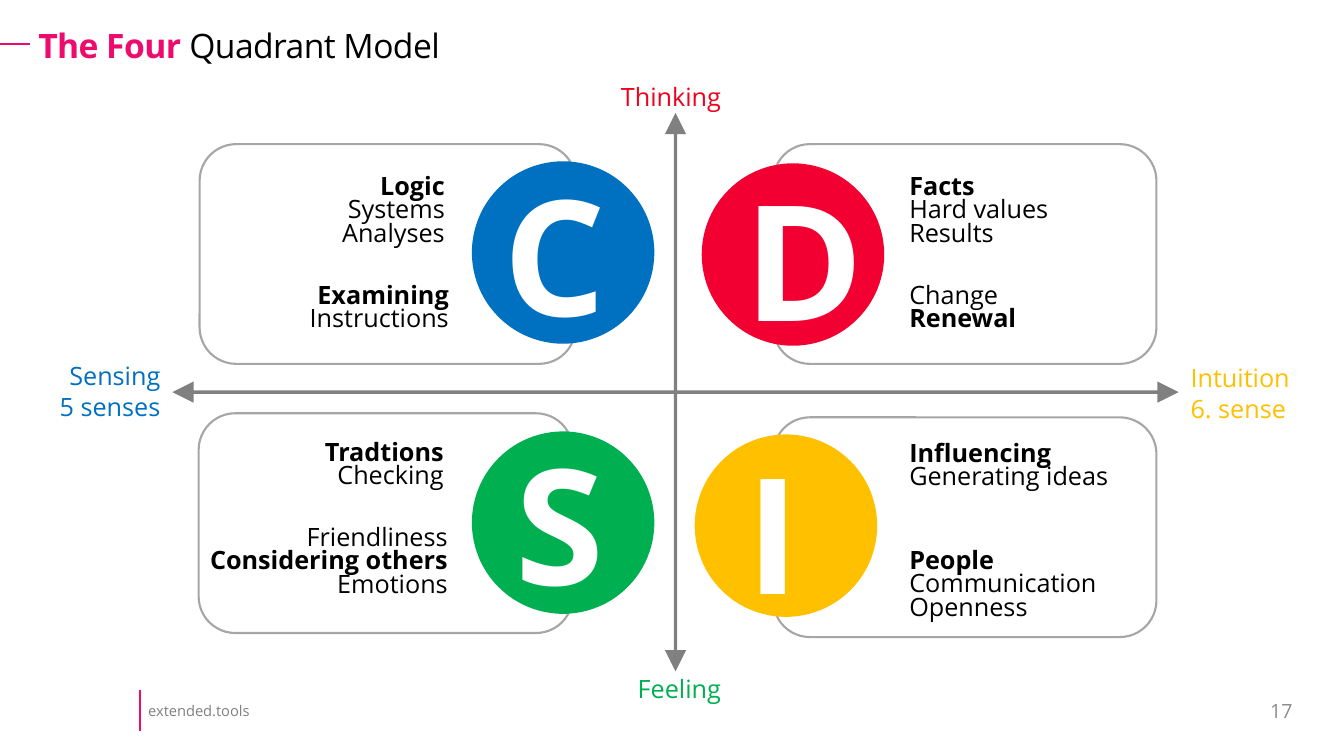
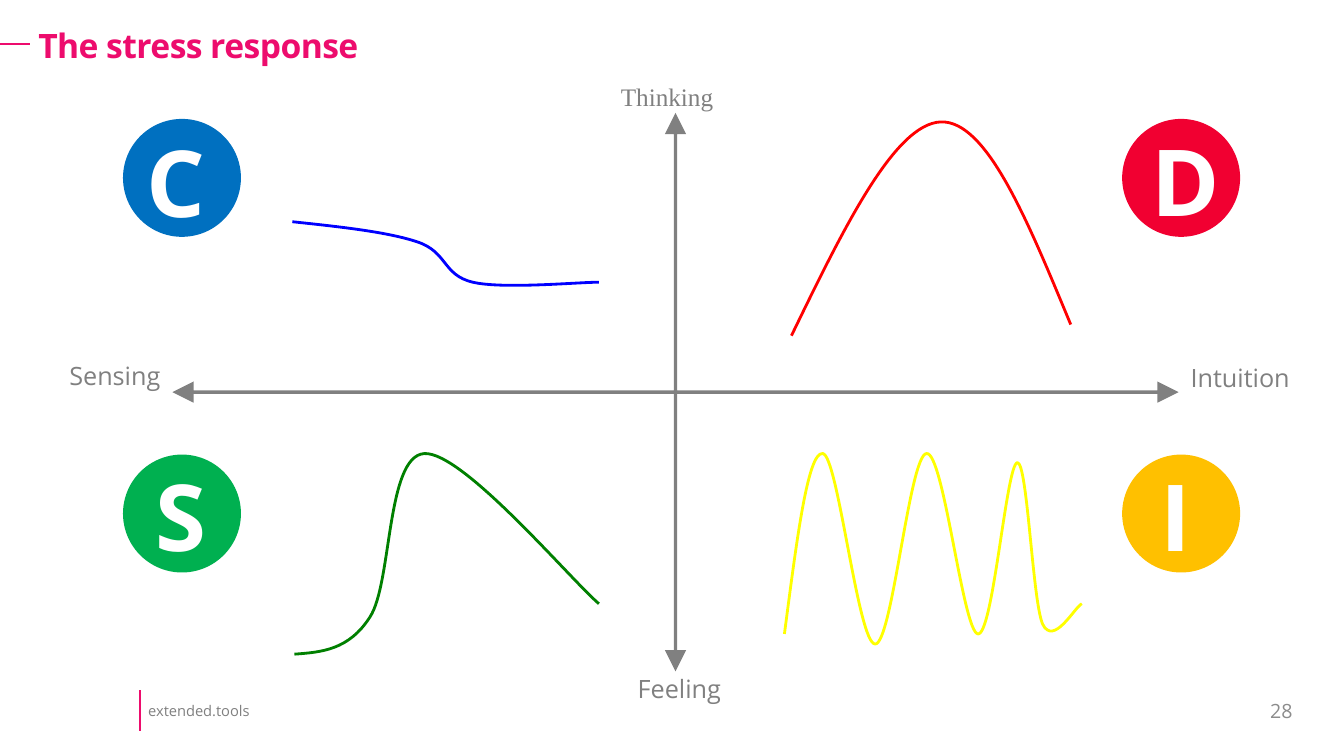
from dataclasses import dataclass

from lxml import etree
from pptx import Presentation
from pptx.dml.color import RGBColor
from pptx.enum.shapes import MSO_CONNECTOR as Link, MSO_SHAPE as Shape
from pptx.enum.text import MSO_ANCHOR as Anchor, MSO_AUTO_SIZE as Fit, PP_ALIGN as Align
from pptx.oxml.ns import qn
from pptx.util import Inches, Pt


@dataclass(frozen=True)
class Theme:
    font: str = "Open Sans"
    serif: str = "Times New Roman"
    accent: str = "ED0C6D"
    ink: str = "000000"
    paper: str = "FFFFFF"
    gray: str = "808080"
    page: str = "8C8C8C"
    frame: str = "A6A6A6"
    thinking: str = "F1001C"
    title_pt: float = 24
    body_pt: float = 18
    footer_pt: float = 10.5
    page_pt: float = 14
    rule_pt: float = 1.5
    curve_pt: float = 2


T = Theme()
W, H = 13.33, 7.5
STYLE = {"C": "0070C0", "D": "F10031", "S": "00B050", "I": "FFC000"}
L, C, R = Align.LEFT, Align.CENTER, Align.RIGHT

AXES = {
    "Intuition": (11.71, 3.55, 1.19, L),
    "Sensing": (0.48, 3.53, 1.21, R),
    "Feeling": (6.22, 6.63, 1.03, R),
    "Thinking": (6.06, 0.76, 1.2, L),
}
AXIS_COLOURS = {"Intuition": STYLE["I"], "Sensing": STYLE["C"],
                "Feeling": STYLE["S"], "Thinking": T.thinking}
AXIS_NOTES = {"Intuition": "6. sense", "Sensing": "5 senses"}

FRAMES = [(1.98, 1.43, 3.73), (1.97, 4.1, 3.71), (7.67, 1.43, 3.8), (7.67, 4.14, 3.8)]
FRAME_H = 2.18

TRAITS = [
    (2.41, 2.8, 2.14, R, [("Examining", True), ("Instructions", False)]),
    (2.57, 1.72, 1.94, R, [("Logic", True), ("Systems", False), ("Analyses", False)]),
    (1.91, 5.2, 2.63, R, [("Friendliness", False), ("Considering others", True), ("Emotions", False)]),
    (2.56, 4.36, 1.94, R, [("Tradtions", True), ("Checking", False)]),
    (8.92, 2.8, 2.26, L, [("Change", False), ("Renewal", True)]),
    (8.92, 1.72, 2.26, L, [("Facts", True), ("Hard values", False), ("Results", False)]),
    (8.92, 5.43, 2.26, L, [("People", True), ("Communication", False), ("Openness", False)]),
    (8.92, 4.37, 2.44, L, [("Influencing", True), ("Generating ideas", False)]),
]

BIG = dict(size=1.81, pt=115, box=(1.25, 2.04))
SMALL = dict(size=1.17, pt=66, box=(0.81, 1.21))
MODEL_BADGES = [("D", 6.96, 1.62, 0.33, -0.08), ("S", 4.68, 4.28, 0.25, -0.12),
                ("I", 6.89, 4.31, 0.15, -0.06), ("C", 4.68, 1.6, 0.2, -0.11)]
STRESS_BADGES = [("D", 11.13, 1.18, 0.19, 0), ("S", 1.22, 4.51, 0.17, 0),
                 ("I", 11.13, 4.51, 0.13, 0), ("C", 1.22, 1.18, 0.12, 0.01)]

CURVES = [
    ("FF0000", [(7.85, 3.33), (8.36, 2.28), (8.87, 1.23), (9.33, 1.21),
                (9.79, 1.19), (10.2, 2.21), (10.62, 3.22)]),
    ("FFFF00", [(7.78, 6.29), (7.9, 5.38), (8.01, 4.48), (8.16, 4.5),
                (8.31, 4.51), (8.51, 6.39), (8.68, 6.39),
                (8.85, 6.39), (9.02, 4.51), (9.19, 4.5),
                (9.36, 4.48), (9.55, 6.27), (9.7, 6.29),
                (9.85, 6.3), (9.98, 4.61), (10.09, 4.59),
                (10.19, 4.58), (10.24, 5.95), (10.34, 6.19),
                (10.45, 6.42), (10.66, 6.02), (10.73, 5.99)]),
    ("008000", [(2.92, 6.49), (3.19, 6.47), (3.46, 6.45), (3.67, 6.12),
                (3.89, 5.78), (3.83, 4.52), (4.21, 4.5),
                (4.59, 4.48), (5.65, 5.74), (5.94, 5.99)]),
    ("0000FF", [(2.9, 2.2), (3.37, 2.25), (3.84, 2.3), (4.14, 2.4),
                (4.44, 2.5), (4.39, 2.73), (4.69, 2.8),
                (4.99, 2.87), (5.73, 2.8), (5.94, 2.8)]),
]


def rgb(value):
    return RGBColor.from_string(value)


def inches(*values):
    return [Inches(v) for v in values]


def add_run(p, text, pt, colour, bold=False, font=T.font):
    r = p.add_run()
    r.text = text
    r.font.name, r.font.size, r.font.bold = font, Pt(pt), bold
    r.font.color.rgb = rgb(colour)
    return r


def add_text(slide, box, lines, pt, colour, align=L, font=T.font, wrap=True,
             anchor=Anchor.TOP, spacing=None, before=0):
    sp = slide.shapes.add_textbox(*inches(*box))
    tf = sp.text_frame
    tf.word_wrap, tf.vertical_anchor = wrap, anchor
    for i, (text, bold) in enumerate(lines):
        p = tf.add_paragraph() if i else tf.paragraphs[0]
        p.alignment = align
        if spacing:
            p.line_spacing = spacing
        if i and before:
            p.space_before = Pt(before)
        add_run(p, text, pt, colour, bold, font)
    return sp


def add_shape(slide, kind, box, fill=None, line=None):
    sp = slide.shapes.add_shape(kind, *inches(*box))
    style(sp, fill, line, T.rule_pt)
    return sp


def style(sp, fill, line, width):
    sp.shadow.inherit = False
    if fill:
        sp.fill.solid()
        sp.fill.fore_color.rgb = rgb(fill)
    else:
        sp.fill.background()
    if line:
        sp.line.color.rgb = rgb(line)
        sp.line.width = Pt(width)
    else:
        sp.line.fill.background()


def add_rule(slide, *ends):
    ln = slide.shapes.add_connector(Link.STRAIGHT, *inches(*ends))
    ln.line.color.rgb = rgb(T.accent)
    ln.line.width = Pt(T.rule_pt)
    etree.SubElement(ln._element.spPr, qn("a:effectLst"))
    return ln


def add_curve(slide, colour, points):
    start, *rest = [tuple(inches(*pt)) for pt in points]
    builder = slide.shapes.build_freeform(*start)
    builder.add_line_segments(rest, close=False)
    sp = builder.convert_to_shape()
    style(sp, None, colour, T.curve_pt)
    segments = list(sp._element.iter(qn("a:lnTo")))
    for i in range(0, len(segments), 3):
        bezier = etree.Element(qn("a:cubicBezTo"))
        segments[i].addprevious(bezier)
        for segment in segments[i:i + 3]:
            bezier.append(segment[0])
            segment.getparent().remove(segment)


def add_badges(slide, badges, size, pt, box):
    for letter, x, y, dx, dy in badges:
        add_shape(slide, Shape.OVAL, (x, y, size, size), STYLE[letter])
        add_text(slide, (x + dx, y + dy, *box), [(letter, True)], pt, T.paper, C)


def add_axes(slide, colours, notes, fonts):
    arrow = add_shape(slide, Shape.QUAD_ARROW, (1.71, 1.12, 9.98, 5.54), T.gray)
    for i, share in enumerate((0.006, 0.019, 0.038)):
        arrow.adjustments[i] = share
    for name, (x, y, w, align) in AXES.items():
        lines = [(text, False) for text in (name, notes.get(name)) if text]
        add_text(slide, (x, y, w, 0.1 + 0.3 * len(lines)), lines, T.body_pt,
                 colours.get(name, T.gray), align, fonts.get(name, T.font), wrap=False)


def set_up_layout(prs):
    layout = prs.slide_layouts[5]
    for ph in list(layout.placeholders):
        if ph.placeholder_format.idx:
            ph._element.getparent().remove(ph._element)
    title = layout.placeholders[0]
    title.left, title.top, title.width, title.height = inches(0.3, 0.25, 12.63, 0.45)
    return layout


def add_furniture(slide, layout):
    footer = add_text(slide, (1.34, 6.89, 1.72, 0.32), [("extended.tools", False)],
                      T.footer_pt, T.gray, anchor=Anchor.MIDDLE)
    tf = footer.text_frame
    tf.margin_left = tf.margin_right = Inches(0.13)
    tf.margin_top = tf.margin_bottom = Inches(0.07)
    parts = [footer, add_rule(slide, 1.39, 6.85, 1.39, 7.25), add_rule(slide, 0, 0.44, 0.3, 0.44)]
    for part in parts:
        layout.shapes._spTree.append(part._element)


def add_slide(prs, layout, title, number):
    slide = prs.slides.add_slide(layout)
    tf = slide.shapes.title.text_frame
    tf.auto_size, tf.vertical_anchor, tf.word_wrap = Fit.NONE, Anchor.TOP, True
    tf.margin_left = tf.margin_right = Inches(0.08)
    tf.margin_top = tf.margin_bottom = Inches(0.04)
    p = tf.paragraphs[0]
    p.alignment, p.line_spacing = L, 0.9
    for text, colour, bold in title:
        r = add_run(p, text, T.title_pt, colour, bold)
        r.font._element.set("spc", "-40")
    add_text(slide, (11.66, 6.85, 1.26, 0.4), [(number, False)], T.page_pt, T.page,
             R, anchor=Anchor.MIDDLE)
    return slide


def main():
    prs = Presentation()
    prs.slide_width, prs.slide_height = inches(W, H)
    layout = set_up_layout(prs)

    model = add_slide(prs, layout, [("The Four ", T.accent, True),
                                    ("Quadrant Model", T.ink, False)], "17")
    add_furniture(model, layout)
    add_axes(model, AXIS_COLOURS, AXIS_NOTES, {})
    for x, y, w in FRAMES:
        add_shape(model, Shape.ROUNDED_RECTANGLE, (x, y, w, FRAME_H), line=T.frame)
    for x, y, w, align, lines in TRAITS:
        add_text(model, (x, y, w, 0.07 + 0.27 * len(lines)), lines, T.body_pt, T.ink,
                 align, spacing=0.7, before=1.7)
    add_badges(model, MODEL_BADGES, **BIG)

    stress = add_slide(prs, layout, [("The stress response", T.accent, True)], "28")
    add_axes(stress, {}, {}, {"Thinking": T.serif})
    for colour, points in CURVES:
        add_curve(stress, colour, points)
    add_badges(stress, STRESS_BADGES, **SMALL)
    prs.save("out.pptx")


if __name__ == "__main__":
    main()
